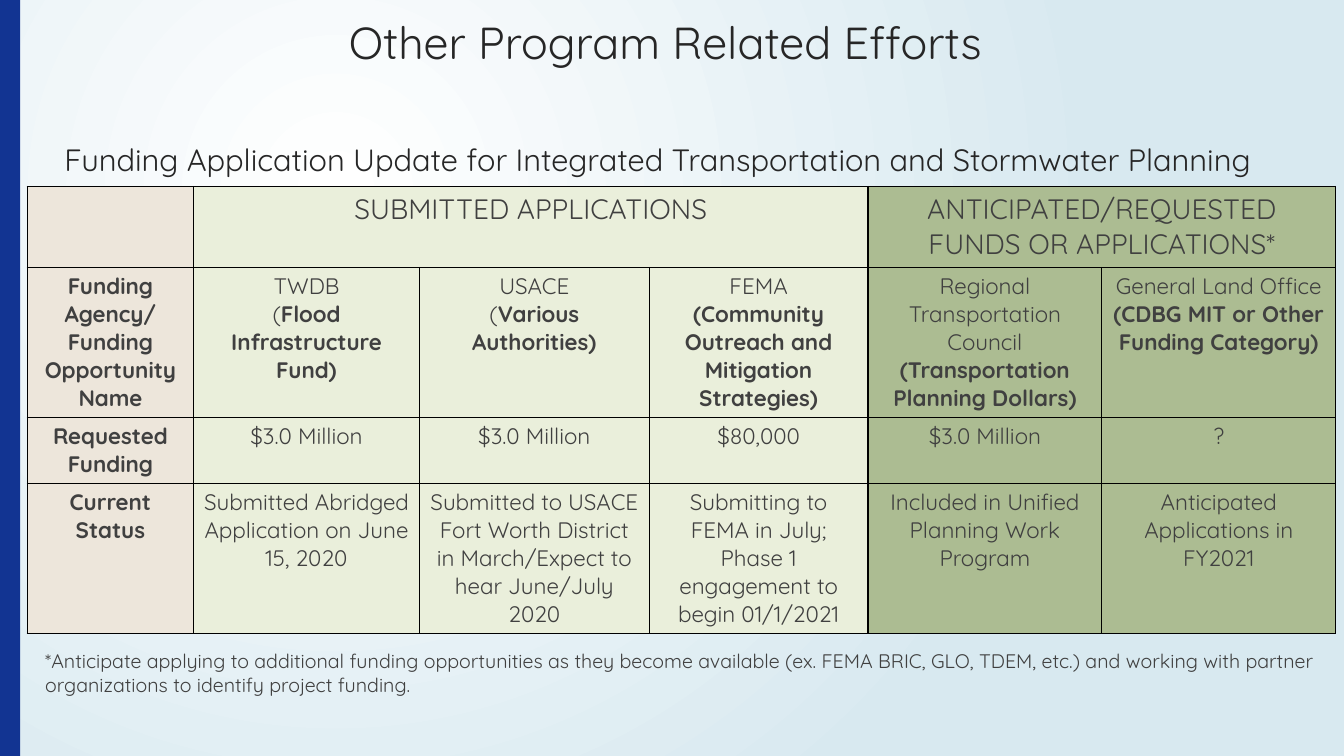
from lxml import etree
from pptx import Presentation
from pptx.dml.color import RGBColor
from pptx.enum.shapes import MSO_SHAPE
from pptx.enum.text import MSO_ANCHOR, PP_ALIGN
from pptx.oxml.ns import qn
from pptx.util import Inches, Pt

RECTANGLE = MSO_SHAPE.RECTANGLE
TOP = MSO_ANCHOR.TOP
LEFT, CENTER = PP_ALIGN.LEFT, PP_ALIGN.CENTER

FONT = "Quicksand"
DARK, GRAY = "262626", "404040"
BEIGE, PALE, GREEN = "EDE6DB", "EAEFDB", "ACBC92"
COLUMN_FILLS = [BEIGE, PALE, PALE, PALE, GREEN, GREEN]
COLUMN_WIDTHS = [12.38, 16.8, 17.1, 16.28, 17.4, 17.4]
ROW_HEIGHTS = [10.72, 19.73, 8.73, 19.84]

HEADINGS = [
    (1, 3, "SUBMITTED APPLICATIONS"),
    (4, 5, "ANTICIPATED/REQUESTED FUNDS OR APPLICATIONS*"),
]
LABELS = ["Funding Agency/ Funding Opportunity Name", "Requested Funding", "Current Status"]
AGENCIES = [
    ("TWDB", "(", "Flood Infrastructure Fund)"),
    ("USACE", "(", "Various Authorities)"),
    ("FEMA", "", "(Community Outreach and Mitigation Strategies)"),
    ("Regional Transportation Council", "", "(Transportation Planning Dollars)"),
    ("General Land Office", "", "(CDBG MIT or Other Funding Category)"),
]
AMOUNTS = ["$3.0 Million", "$3.0 Million", "$80,000", "$3.0 Million", "?"]
STATUSES = [
    "Submitted Abridged Application on June 15, 2020",
    "Submitted to USACE Fort Worth District in March/Expect to hear June/July 2020",
    "Submitting to FEMA in July; Phase 1 engagement to begin 01/1/2021",
    "Included in Unified Planning Work Program",
    "Anticipated Applications in FY2021",
]


def color(value):
    return RGBColor.from_string(value)


class SlideBuilder:
    def __init__(self, deck):
        self.width, self.height = deck.slide_width, deck.slide_height
        self.page = deck.slides.add_slide(deck.slide_layouts[5])

    def across(self, percent):
        return round(self.width * percent / 100)

    def down(self, percent):
        return round(self.height * percent / 100)

    def area(self, left, top, width, height):
        return self.across(left), self.down(top), self.across(width), self.down(height)

    def background(self, center, edge):
        fill = self.page.background.fill
        fill.gradient()
        for stop, value in zip(fill.gradient_stops, (center, edge)):
            stop.color.rgb = color(value)
        gradient = next(self.page.element.iter(qn("a:gradFill")))
        gradient.remove(gradient.find(qn("a:lin")))
        circle = etree.SubElement(gradient, qn("a:path"), path="circle")
        etree.SubElement(circle, qn("a:fillToRect"), l="50000", t="50000", r="100000", b="100000")

    def bar(self, place, fill):
        shape = self.page.shapes.add_shape(RECTANGLE, *self.area(*place))
        shape.shadow.inherit = False
        shape.fill.solid()
        shape.fill.fore_color.rgb = color(fill)
        shape.line.fill.background()

    def fill_text(self, frame, paragraphs, size, ink, align=LEFT):
        for index, spans in enumerate(paragraphs):
            para = frame.add_paragraph() if index else frame.paragraphs[0]
            para.alignment = align
            para.font.name = FONT
            para.font.size = Pt(size)
            para.font.color.rgb = color(ink)
            uniform = len({bold for _, bold in spans}) == 1
            if uniform:
                para.font.bold = spans[0][1]
            for text, bold in spans:
                span = para.add_run()
                span.text = text
                if not uniform:
                    span.font.bold = bold

    def title(self, place, text, size):
        box = self.page.shapes.title
        box.left, box.top, box.width, box.height = self.area(*place)
        box.text_frame.vertical_anchor = TOP
        self.fill_text(box.text_frame, [[(text, False)]], size, DARK)

    def text(self, place, text, size, ink):
        box = self.page.shapes.add_textbox(*self.area(*place))
        box.text_frame.word_wrap = True
        self.fill_text(box.text_frame, [[(text, False)]], size, ink)

    def table(self, left, top, widths, heights):
        place = self.area(left, top, sum(widths), sum(heights))
        table = self.page.shapes.add_table(len(heights), len(widths), *place).table
        table.first_row = table.horz_banding = False
        for column, width in zip(table.columns, widths):
            column.width = self.across(width)
        for row, height in zip(table.rows, heights):
            row.height = self.down(height)
            for cell, fill in zip(row.cells, COLUMN_FILLS):
                self.border(cell)
                cell.fill.solid()
                cell.fill.fore_color.rgb = color(fill)
        return table

    def border(self, cell):
        properties = cell._tc.get_or_add_tcPr()
        for side in ("lnL", "lnR", "lnT", "lnB"):
            line = etree.SubElement(properties, qn(f"a:{side}"), w=str(Pt(1)))
            solid = etree.SubElement(line, qn("a:solidFill"))
            etree.SubElement(solid, qn("a:srgbClr"), val="000000")

    def cell(self, cell, paragraphs, size=16):
        self.fill_text(cell.text_frame, paragraphs, size, GRAY, CENTER)


def agency_paragraphs(name, opening, program):
    spans = [(opening, False)] if opening else []
    return [[(name, False)], spans + [(program, True)]]


def main():
    deck = Presentation()
    deck.slide_width, deck.slide_height = Inches(13.33), Inches(7.5)
    slide = SlideBuilder(deck)
    slide.background("FFFFFF", "D8E9F0")
    slide.bar((0, 0, 1.5, 100), "123492")
    slide.title((25.2, 1.33, 51.08, 11.47), "Other Program Related Efforts", 32)

    table = slide.table(2.03, 24.67, COLUMN_WIDTHS, ROW_HEIGHTS)
    for first, last, heading in HEADINGS:
        table.cell(0, first).merge(table.cell(0, last))
        slide.cell(table.cell(0, first), [[(heading, False)]], 20)
    body = [
        [agency_paragraphs(*agency) for agency in AGENCIES],
        [[[(amount, False)]] for amount in AMOUNTS],
        [[[(status, False)]] for status in STATUSES],
    ]
    for row, (label, entries) in enumerate(zip(LABELS, body), 1):
        for column, paragraphs in enumerate([[[(label, True)]]] + entries):
            slide.cell(table.cell(row, column), paragraphs)

    slide.text(
        (2.63, 85.2, 97.36, 7.6),
        "*Anticipate applying to additional funding opportunities as they become available "
        "(ex. FEMA BRIC, GLO, TDEM, etc.) and working with partner organizations "
        "to identify project funding.",
        14, GRAY,
    )
    slide.text(
        (4.05, 18, 94.36, 6.53),
        "Funding Application Update for Integrated Transportation and Stormwater Planning",
        22, DARK,
    )
    deck.save("out.pptx")


if __name__ == "__main__":
    main()
